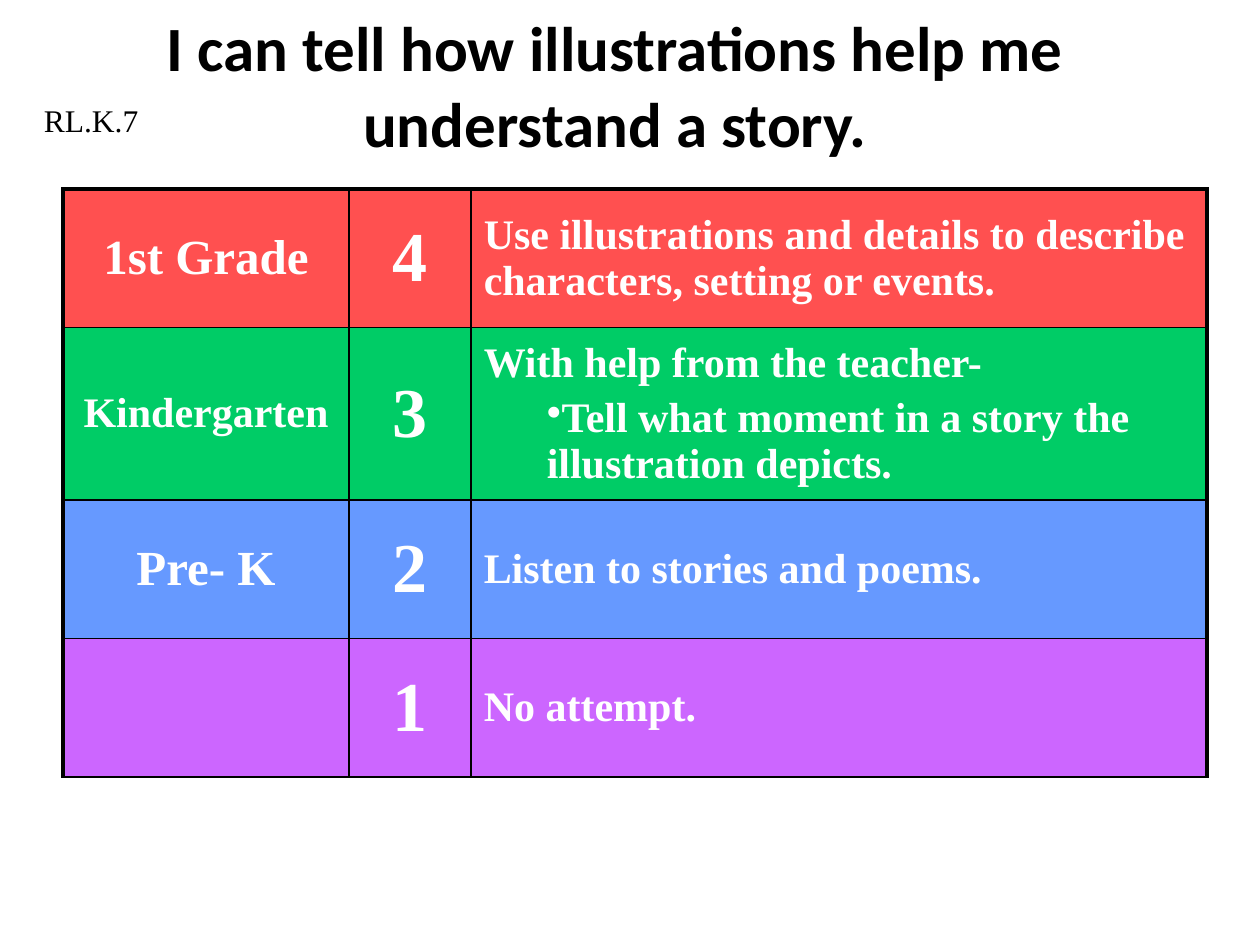
from lxml import etree
from pptx import Presentation
from pptx.dml.color import RGBColor
from pptx.enum.text import MSO_ANCHOR, PP_ALIGN
from pptx.oxml.ns import qn
from pptx.util import Inches, Pt

MIDDLE, TOP = MSO_ANCHOR.MIDDLE, MSO_ANCHOR.TOP
CENTER, LEFT = PP_ALIGN.CENTER, PP_ALIGN.LEFT
BLACK, WHITE = "000000", "FFFFFF"
SERIF, SANS = "Times New Roman", "Calibri"

COLUMN_WIDTHS = (2.27, 0.97, 5.84)
# Fill, row height, level, level text size, score, description lines
RUBRIC = [
    ("FF5050", 1.1, "1st Grade", 28, "4",
     ["Use illustrations and details to describe characters, setting or events."]),
    ("00CC66", 1.3, "Kindergarten", 24, "3",
     ["With help from the teacher-",
      "Tell what moment in a story the illustration depicts."]),
    ("6699FF", 1.1, "Pre- K", 28, "2", ["Listen to stories and poems."]),
    ("CC66FF", 1.1, "", 28, "1", ["No attempt."]),
]


def color(value):
    return RGBColor.from_string(value)


def add_span(para, text, size, font, ink, bold=False):
    span = para.add_run()
    span.text = text
    span.font.size = Pt(size)
    span.font.name = font
    span.font.bold = bold
    span.font.color.rgb = color(ink)


def add_text(page, box, text, size, font, align, anchor, bold=False):
    frame = page.shapes.add_textbox(*map(Inches, box)).text_frame
    frame.word_wrap = True
    frame.vertical_anchor = anchor
    para = frame.paragraphs[0]
    para.alignment = align
    add_span(para, text, size, font, BLACK, bold)


def set_bullet(para, indent):
    props = para._p.get_or_add_pPr()
    props.set("marL", str(Inches(indent)))
    props.set("indent", "0")
    etree.SubElement(props, qn("a:buChar")).set("char", "•")


def set_borders(cell, widths):
    """Draw black cell borders; widths maps each side to points."""
    props = cell._tc.get_or_add_tcPr()
    for place, (side, width) in enumerate(widths.items()):
        line = etree.Element(qn(f"a:ln{side}"), w=str(Pt(width)))
        fill = etree.SubElement(line, qn("a:solidFill"))
        etree.SubElement(fill, qn("a:srgbClr")).set("val", BLACK)
        props.insert(place, line)


def fill_cell(cell, lines, size, align, fill):
    cell.fill.solid()
    cell.fill.fore_color.rgb = color(fill)
    cell.vertical_anchor = MIDDLE
    frame = cell.text_frame
    for index, text in enumerate(lines):
        para = frame.add_paragraph() if index else frame.paragraphs[0]
        para.alignment = align
        para.space_before = Pt(size * 0.2)
        if index:
            para.level = 1
            set_bullet(para, 0.5)
        if text:
            add_span(para, text, size, SERIF, WHITE, True)


def add_rubric(page, box):
    last_row, last_column = len(RUBRIC) - 1, len(COLUMN_WIDTHS) - 1
    table = page.shapes.add_table(
        len(RUBRIC), len(COLUMN_WIDTHS), *map(Inches, box)).table
    table.first_row = table.horz_banding = False
    for column, width in zip(table.columns, COLUMN_WIDTHS):
        column.width = Inches(width)
    for r, (fill, height, level, level_size, score, lines) in enumerate(RUBRIC):
        table.rows[r].height = Inches(height)
        contents = [([level], level_size, CENTER), ([score], 40, CENTER),
                    (lines, 24, LEFT)]
        for c, (texts, size, align) in enumerate(contents):
            cell = table.cell(r, c)
            fill_cell(cell, texts, size, align, fill)
            # Heavy outer frame, thin inner grid
            set_borders(cell, {
                "L": 2.25 if c == 0 else 1,
                "R": 2.25 if c == last_column else 1,
                "T": 2.25 if r == 0 else 1,
                "B": 1.5 if r == last_row else 1,
            })


def main():
    deck = Presentation()
    deck.slide_width, deck.slide_height = Inches(10), Inches(7.5)
    page = deck.slides.add_slide(deck.slide_layouts[6])

    # Learning goal
    add_text(page, (0.17, 0.17, 9.42, 1),
             "I can tell how illustrations help me understand a story.",
             36, SANS, CENTER, MIDDLE, True)
    # Scoring rubric
    add_rubric(page, (0.5, 1.5, sum(COLUMN_WIDTHS), sum(row[1] for row in RUBRIC)))
    # Standard code
    add_text(page, (0.25, 0.75, 1.42, 0.4), "RL.K.7", 18, SERIF, LEFT, TOP)

    deck.save("out.pptx")


if __name__ == "__main__":
    main()
